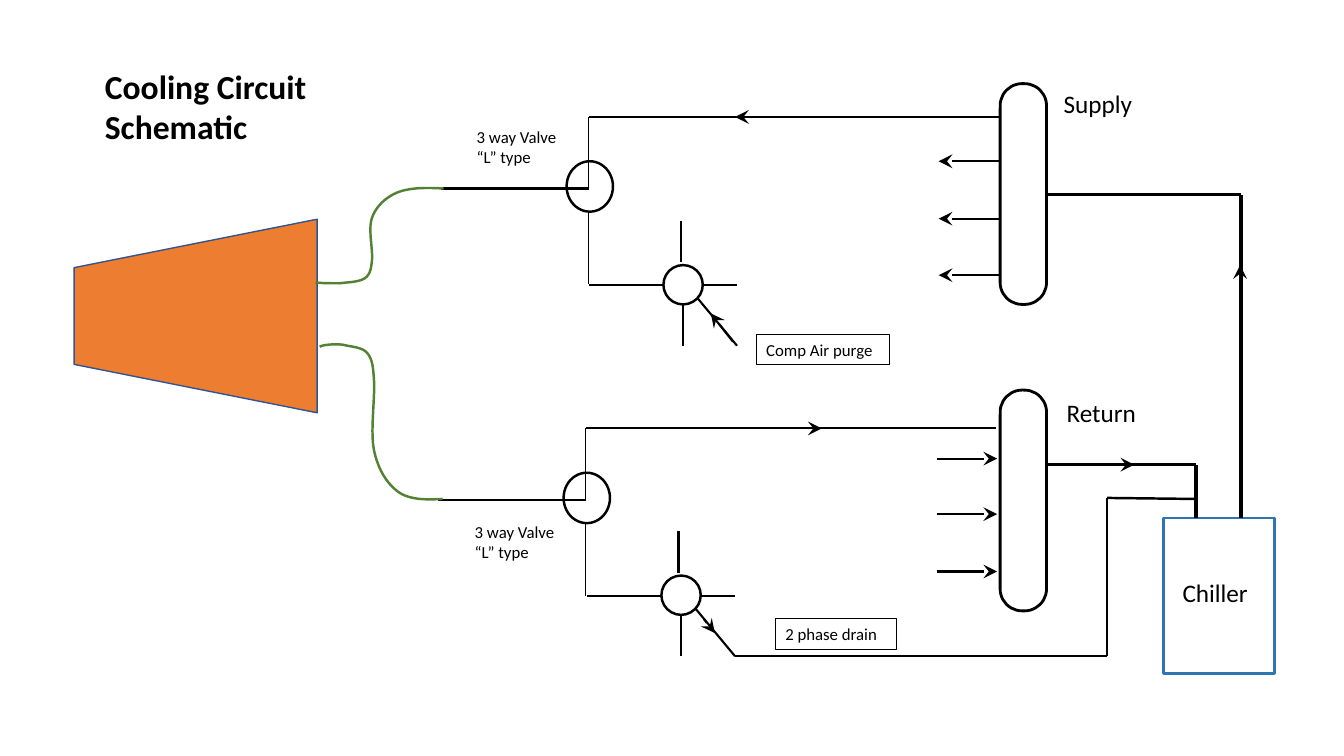
from dataclasses import dataclass

import lxml.etree
import pptx
import pptx.dml.color
import pptx.enum.shapes
import pptx.enum.text
import pptx.oxml.ns
import pptx.util

Inches = pptx.util.Inches
Kind = pptx.enum.shapes.MSO_SHAPE
Point = tuple[float, float]
INK = {"black": "000000", "orange": "ED7D31", "navy": "325491",
       "green": "548235", "blue": "2E75B6"}


@dataclass
class Pipe:
    start: Point
    end: Point
    width: float = 1.5
    arrow: bool = False


@dataclass
class Form:
    kind: Kind
    box: tuple[float, float, float, float]
    width: float = 1.75
    line: str = "black"
    fill: str = ""
    turn: float = 0
    round: float | None = None


@dataclass
class Label:
    text: str
    box: tuple[float, float, float, float]
    size: int
    frame: bool = False


@dataclass
class Hose:
    start: Point
    curves: list[tuple[Point, Point, Point]]


def color(name: str) -> pptx.dml.color.RGBColor:
    return pptx.dml.color.RGBColor.from_string(INK[name])


def style_line(line, name: str, width: float) -> None:
    line.color.rgb = color(name)
    line.width = pptx.util.Pt(width)


def draw_form(slide, form: Form) -> None:
    shape = slide.shapes.add_shape(form.kind, *map(Inches, form.box))
    shape.shadow.inherit = False
    shape.rotation = form.turn
    if form.round is not None:
        shape.adjustments[0] = form.round
    if form.fill:
        shape.fill.solid()
        shape.fill.fore_color.rgb = color(form.fill)
    else:
        shape.fill.background()
    style_line(shape.line, form.line, form.width)


def draw_pipe(slide, pipe: Pipe) -> None:
    ends = map(Inches, (*pipe.start, *pipe.end))
    link = slide.shapes.add_connector(pptx.enum.shapes.MSO_CONNECTOR.STRAIGHT, *ends)
    style_line(link.line, "black", pipe.width)
    qn = pptx.oxml.ns.qn
    props = link._element.spPr
    if pipe.arrow:
        lxml.etree.SubElement(props.find(qn("a:ln")), qn("a:tailEnd"),
                              type="stealth", w="lg", len="lg")
    lxml.etree.SubElement(props, qn("a:effectLst"))


def write(shape, text: str, size: int, bold: bool = False) -> None:
    frame = shape.text_frame
    frame.word_wrap = True
    frame.auto_size = pptx.enum.text.MSO_AUTO_SIZE.SHAPE_TO_FIT_TEXT
    frame.vertical_anchor = pptx.enum.text.MSO_ANCHOR.TOP
    frame.text = text
    for part in frame.paragraphs:
        part.alignment = pptx.enum.text.PP_ALIGN.LEFT
        part.line_spacing = 1.0
        for run in part.runs:
            run.font.name = "Calibri"
            run.font.size = pptx.util.Pt(size)
            run.font.bold = bold
            run.font.color.rgb = color("black")


def draw_label(slide, label: Label) -> None:
    shape = slide.shapes.add_textbox(*map(Inches, label.box))
    write(shape, label.text, label.size)
    if label.frame:
        style_line(shape.line, "black", 0.75)


def bend(start: Point, curve: tuple[Point, Point, Point], steps: int = 10) -> list[Point]:
    nodes = (start, *curve)
    points = []
    for step in range(1, steps + 1):
        t = step / steps
        parts = ((1 - t) ** 3, 3 * t * (1 - t) ** 2, 3 * t * t * (1 - t), t ** 3)
        points.append((sum(w * n[0] for w, n in zip(parts, nodes)),
                       sum(w * n[1] for w, n in zip(parts, nodes))))
    return points


def draw_hose(slide, hose: Hose) -> None:
    points = []
    last = hose.start
    for curve in hose.curves:
        points += bend(last, curve)
        last = curve[-1]
    pen = slide.shapes.build_freeform(*map(Inches, hose.start))
    pen.add_line_segments([(Inches(x), Inches(y)) for x, y in points], close=False)
    shape = pen.convert_to_shape()
    shape.shadow.inherit = False
    shape.fill.background()
    style_line(shape.line, "green", 1.75)


def draw_joint(slide, x: float, y: float, size: Point, pipes: list[Pipe]) -> None:
    draw_form(slide, Form(Kind.OVAL, (x, y, *size)))
    for pipe in pipes:
        (a, b), (c, d) = pipe.start, pipe.end
        draw_pipe(slide, Pipe((x + a, y + b), (x + c, y + d), pipe.width))


VALVE = [Pipe((-1.25, 0.27), (0.22, 0.27)), Pipe((0.22, -0.44), (0.22, 0.28), 0.5),
         Pipe((0.22, -0.44), (3.6, -0.44)), Pipe((0.22, 0.5), (0.22, 1.22), 0.5)]
CROSS = [Pipe((0, 0.2), (-0.74, 0.2)), Pipe((0.17, -0.44), (0.17, -0.03)),
         Pipe((0.19, 0.39), (0.19, 0.8)), Pipe((0.4, 0.2), (0.73, 0.2)),
         Pipe((0.34, 0.33), (0.73, 0.8))]
FORMS = [Form(Kind.TRAPEZOID, (0.98, 1.93, 1.92, 2.41), 1, "navy", "orange", 270),
         *(Form(Kind.ROUNDED_RECTANGLE, (9.92, y, 0.46, 2.19), 2, round=0.474)
           for y in (0.83, 3.87)),
         Form(Kind.RECTANGLE, (11.54, 5.14, 1.1, 1.54), 2, "blue")]
HOSES = [
    Hose((4.4, 1.87), [((4.23, 1.86), (4.06, 1.86), (3.94, 1.91)),
                       ((3.82, 1.96), (3.73, 2.05), (3.69, 2.16)),
                       ((3.65, 2.27), (3.7, 2.48), (3.69, 2.58)),
                       ((3.68, 2.68), (3.67, 2.72), (3.62, 2.76)),
                       ((3.56, 2.8), (3.44, 2.8), (3.37, 2.81)),
                       ((3.29, 2.81), (3.16, 2.81), (3.13, 2.8))]),
    Hose((4.39, 4.95), [((4.23, 4.96), (4.06, 4.96), (3.95, 4.88)),
                        ((3.84, 4.8), (3.75, 4.66), (3.71, 4.47)),
                        ((3.67, 4.29), (3.72, 3.95), (3.71, 3.78)),
                        ((3.7, 3.62), (3.69, 3.56), (3.64, 3.5)),
                        ((3.59, 3.44), (3.47, 3.44), (3.4, 3.42)),
                        ((3.32, 3.41), (3.2, 3.42), (3.17, 3.44))])]
PIPES = [
    Pipe((9.22, 1.16), (9.91, 1.16)), Pipe((9.19, 4.25), (9.88, 4.25)),
    Pipe((12.31, 5.14), (12.31, 1.93), 2.5), Pipe((11.86, 5.14), (11.86, 4.61), 2.5),
    Pipe((10.38, 1.93), (12.31, 1.93), 2.5), Pipe((10.38, 4.61), (11.86, 4.61), 2.5),
    Pipe((7.29, 6.51), (10.98, 6.51), 1.75), Pipe((10.98, 6.51), (10.98, 4.94), 1.75),
    Pipe((10.98, 4.94), (11.86, 4.95), 1.75),
    Pipe((6.98, 4.25), (8.15, 4.25), arrow=True),
    Pipe((8.82, 1.16), (7.29, 1.16), arrow=True),
    Pipe((12.3, 3.96), (12.3, 2.63), arrow=True),
    Pipe((10.71, 4.61), (11.25, 4.61), arrow=True),
    Pipe((6.98, 6.14), (7.09, 6.28), arrow=True),
    Pipe((7.27, 3.39), (7.05, 3.11), arrow=True),
    *(Pipe((9.91, y), (9.31, y), arrow=True) for y in (1.6, 2.17, 2.73)),
    *(Pipe((9.29, y), (9.89, y), arrow=True) for y in (4.55, 5.1, 5.67))]
VALVE_TEXT = "3 way Valve\v“L” type"
LABELS = [Label("Supply", (10.45, 0.83, 1.25, 0.4), 18),
          Label("Return", (10.48, 3.89, 1.25, 0.4), 18),
          Label("Chiller", (11.63, 5.68, 1.01, 0.4), 18),
          Label("Comp Air purge", (7.5, 3.32, 1.32, 0.3), 12, True),
          Label("2 phase drain", (7.69, 6.14, 1.2, 0.3), 12, True),
          Label(VALVE_TEXT, (4.63, 1.21, 1.1, 0.5), 12),
          Label(VALVE_TEXT, (4.61, 5.13, 1.1, 0.5), 12)]


def main() -> None:
    deck = pptx.Presentation()
    deck.slide_width, deck.slide_height = Inches(13.33), Inches(7.5)
    slide = deck.slides.add_slide(deck.slide_layouts[5])
    title = slide.shapes.title
    title.left, title.top, title.width, title.height = map(Inches, (0.94, 0.6, 2.71, 0.91))
    write(title, "Cooling Circuit Schematic", 24, True)
    for form in FORMS:
        draw_form(slide, form)
    for x, y in ((5.62, 1.6), (5.59, 4.69)):
        draw_joint(slide, x, y, (0.46, 0.5), VALVE)
    for hose in HOSES:
        draw_hose(slide, hose)
    for x, y in ((6.58, 2.63), (6.56, 5.71)):
        draw_joint(slide, x, y, (0.39, 0.39), CROSS)
    for pipe in PIPES:
        draw_pipe(slide, pipe)
    for label in LABELS:
        draw_label(slide, label)
    deck.save("out.pptx")


if __name__ == "__main__":
    main()
